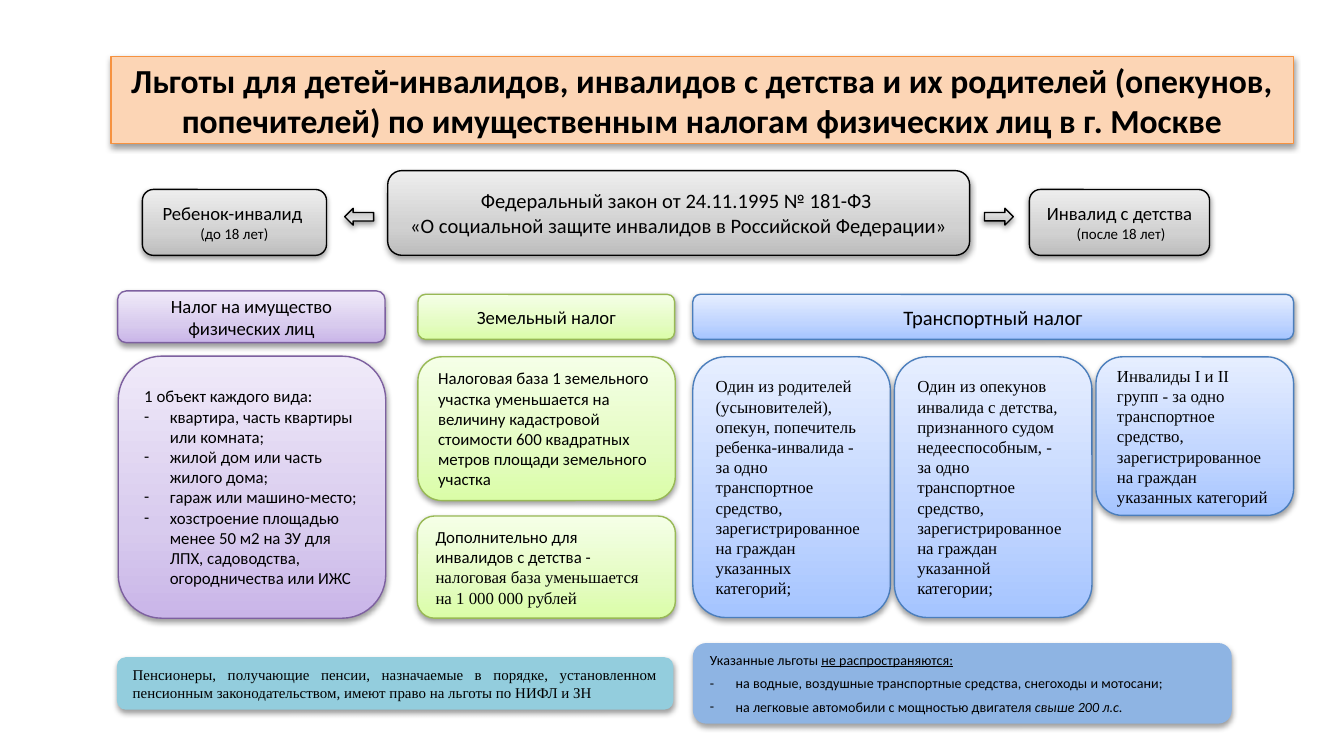
from dataclasses import dataclass
from typing import Optional

from lxml import etree
from pptx import Presentation
from pptx import util as u
from pptx.dml.color import RGBColor
from pptx.enum import shapes, text
from pptx.oxml.ns import qn

PX = 4572  # 200 px to the inch
INDENT = 38

COLORS = {
    "text": "000000", "shadow": "000000",
    "title": "FCD5B5", "title_line": "F69240",
    "pension": "93CDDD", "exclusion": "8EB4E3",
    "gray_line": "000000", "violet_line": "7D60A0",
    "green_line": "98B955", "blue_line": "4B7EBC",
}
# Gradient colours from bottom to top, at the shares in STOPS
STOPS = (0, 35, 100)
GRADIENTS = {
    "gray": ("BDBDBD", "D1D1D1", "EEEEEE"),
    "violet": ("C9B5E8", "D8CBEE", "F0EAF9"),
    "green": ("DAFDA7", "E4FCC2", "F5FFE7"),
    "blue": ("A4C4FF", "BFD4FF", "E6EEFF"),
}
SANS, SERIF = "Calibri", "Times New Roman"
CENTER, LEFT, JUSTIFY = text.PP_ALIGN.CENTER, text.PP_ALIGN.LEFT, text.PP_ALIGN.JUSTIFY


@dataclass
class Run:
    text: str
    size: float = 9
    font: str = SANS
    bold: bool = False
    italic: bool = False
    underline: bool = False


@dataclass
class Para:
    runs: list[Run]
    bullet: bool = False
    before: float = 0


@dataclass
class Box:
    left: int
    top: int
    width: int
    height: int
    color: str
    paras: list[Para]
    align: text.PP_ALIGN = LEFT


def line_of(content: str, size: float = 9, font: str = SANS, **options) -> Para:
    return Para([Run(content, size, font)], **options)


def add_child(parent, tag: str, **attributes):
    return etree.SubElement(parent, qn(tag), {k: str(v) for k, v in attributes.items()})


def paint(shape, color: str, line: Optional[str]) -> None:
    """Fill, outline and soft shadow below the shape."""
    if color in GRADIENTS:
        shape.fill.gradient()
        shape.fill.gradient_angle = 90
        stops = shape._element.spPr.find(".//" + qn("a:gsLst"))
        for stop in list(stops):
            stops.remove(stop)
        for share, tone in zip(STOPS, GRADIENTS[color]):
            add_child(add_child(stops, "a:gs", pos=share * 1000), "a:srgbClr", val=tone)
    else:
        shape.fill.solid()
        shape.fill.fore_color.rgb = RGBColor.from_string(COLORS[color])

    if line:
        shape.line.color.rgb = RGBColor.from_string(COLORS[line])
        shape.line.width = u.Pt(0.75)
    else:
        shape.line.fill.background()

    shape.shadow.inherit = False
    effects = shape._element.spPr.find(qn("a:effectLst"))
    outer = add_child(effects, "a:outerShdw", blurRad=u.Pt(3.1), dist=u.Pt(1.6),
                      dir=5400000, rotWithShape=0)
    add_child(add_child(outer, "a:srgbClr", val=COLORS["shadow"]), "a:alpha", val=38000)


def write(shape, paras: list[Para], align: text.PP_ALIGN) -> None:
    frame = shape.text_frame
    frame.word_wrap = True
    frame.auto_size = text.MSO_AUTO_SIZE.NONE
    frame.vertical_anchor = text.MSO_ANCHOR.MIDDLE
    for index, para in enumerate(paras):
        paragraph = frame.add_paragraph() if index else frame.paragraphs[0]
        paragraph.alignment = align
        if para.before:
            paragraph.space_before = u.Pt(para.before)
        if para.bullet:
            props = paragraph._p.get_or_add_pPr()
            props.set("marL", str(INDENT * PX))
            props.set("indent", str(-INDENT * PX))
            add_child(props, "a:buFont", typeface=SANS)
            add_child(props, "a:buChar", char="-")
        for part in para.runs:
            run = paragraph.add_run()
            run.text = part.text
            font = run.font
            font.name, font.size = part.font, u.Pt(part.size)
            font.bold, font.italic, font.underline = part.bold, part.italic, part.underline
            font.color.rgb = RGBColor.from_string(COLORS["text"])


def add_box(slide, box: Box) -> None:
    shape = slide.shapes.add_shape(shapes.MSO_SHAPE.ROUNDED_RECTANGLE, box.left * PX,
                                   box.top * PX, box.width * PX, box.height * PX)
    paint(shape, box.color, f"{box.color}_line" if box.color in GRADIENTS else None)
    write(shape, box.paras, box.align)


def add_arrow(slide, left: int, rotation: int) -> None:
    arrow = slide.shapes.add_shape(shapes.MSO_SHAPE.RIGHT_ARROW,
                                   left * PX, 310 * PX, 43 * PX, 25 * PX)
    arrow.rotation = rotation
    paint(arrow, "gray", "gray_line")


# Law and the two groups it covers
LAW = [
    Box(212, 282, 274, 98, "gray",
        [line_of("Ребенок-инвалид ", 10), line_of("(до 18 лет)", 8)], CENTER),
    Box(577, 254, 866, 126, "gray",
        [line_of("Федеральный закон от 24.11.1995 № 181-ФЗ ", 11),
         line_of("«О социальной защите инвалидов в Российской Федерации»", 11)], CENTER),
    Box(1532, 282, 268, 98, "gray",
        [line_of("Инвалид с детства", 10), line_of(" (после 18 лет)", 8)], CENTER),
]

# Tax headings
TAXES = [
    Box(175, 433, 398, 77, "violet", [line_of("Налог на имущество физических лиц", 10)], CENTER),
    Box(622, 438, 382, 67, "green", [line_of("Земельный налог", 10)], CENTER),
    Box(1031, 438, 894, 67, "blue", [line_of("Транспортный налог", 11)], CENTER),
]

# Property and land benefits
PROPERTY_ITEMS = [
    "квартира, часть квартиры или комната;",
    "жилой дом или часть жилого дома;",
    "гараж или машино-место;",
    "хозстроение площадью менее 50 м2 на ЗУ для ЛПХ, садоводства, огородничества или ИЖС",
]
PROPERTY_AND_LAND = [
    Box(176, 530, 398, 390, "violet", [line_of("1 объект каждого вида:")]
        + [line_of(item, bullet=True) for item in PROPERTY_ITEMS]),
    Box(622, 531, 383, 214, "green", [line_of(
        "Налоговая база 1 земельного участка уменьшается на величину кадастровой "
        "стоимости 600 квадратных метров площади земельного участка")]),
    Box(621, 768, 384, 152, "green", [Para([
        Run("Дополнительно для инвалидов с детства - "),
        Run("налоговая база уменьшается на 1 000 000 рублей", font=SERIF)])]),
]

# Vehicle benefits: who is entitled, end of the phrase, box height
VEHICLE = "за одно транспортное средство, зарегистрированное на граждан"
ENTITLED = [
    ("Один из родителей (усыновителей), опекун, попечитель ребенка-инвалида",
     "указанных категорий;", 388),
    ("Один из опекунов инвалида с детства, признанного судом недееспособным,",
     "указанной категории;", 388),
    ("Инвалиды I и II групп", "указанных категорий", 236),
]
VEHICLES = [
    Box(1031 + 300 * column, 531, 294, height, "blue",
        [line_of(f"{person} - {VEHICLE} {ending}", 9, SERIF)])
    for column, (person, ending, height) in enumerate(ENTITLED)
]

# Notes at the bottom
NOTES = [
    Box(174, 978, 828, 78, "pension", [line_of(
        "Пенсионеры, получающие пенсии, назначаемые в порядке, установленном пенсионным "
        "законодательством, имеют право на льготы по НИФЛ и ЗН ", 8, SERIF)], JUSTIFY),
    Box(1031, 957, 802, 120, "exclusion", [
        Para([Run("Указанные льготы ", 7.5), Run("не распространяются:", 7.5, underline=True)]),
        line_of("на водные, воздушные транспортные средства, снегоходы и мотосани;", 7.5,
                bullet=True, before=3.7),
        Para([Run("на легковые автомобили с мощностью двигателя ", 7.5),
              Run("свыше 200 л.с.", 7.5, italic=True)], bullet=True, before=3.7)]),
]


def main() -> None:
    deck = Presentation()
    deck.slide_width, deck.slide_height = 2000 * PX, 1125 * PX
    slide = deck.slides.add_slide(deck.slide_layouts[5])

    # Title
    title = slide.shapes.title
    title.left, title.top, title.width, title.height = 165 * PX, 84 * PX, 1760 * PX, 130 * PX
    paint(title, "title", "title_line")
    write(title, [Para([Run("Льготы для детей-инвалидов, инвалидов с детства и их родителей "
                            "(опекунов, попечителей) по имущественным налогам физических лиц "
                            "в г. Москве", 18, bold=True)])], CENTER)

    # Boxes and the arrows from the law to both groups
    for box in LAW + TAXES + PROPERTY_AND_LAND + VEHICLES + NOTES:
        add_box(slide, box)
    add_arrow(slide, 513, 180)
    add_arrow(slide, 1465, 0)

    deck.save("out.pptx")


if __name__ == "__main__":
    main()
